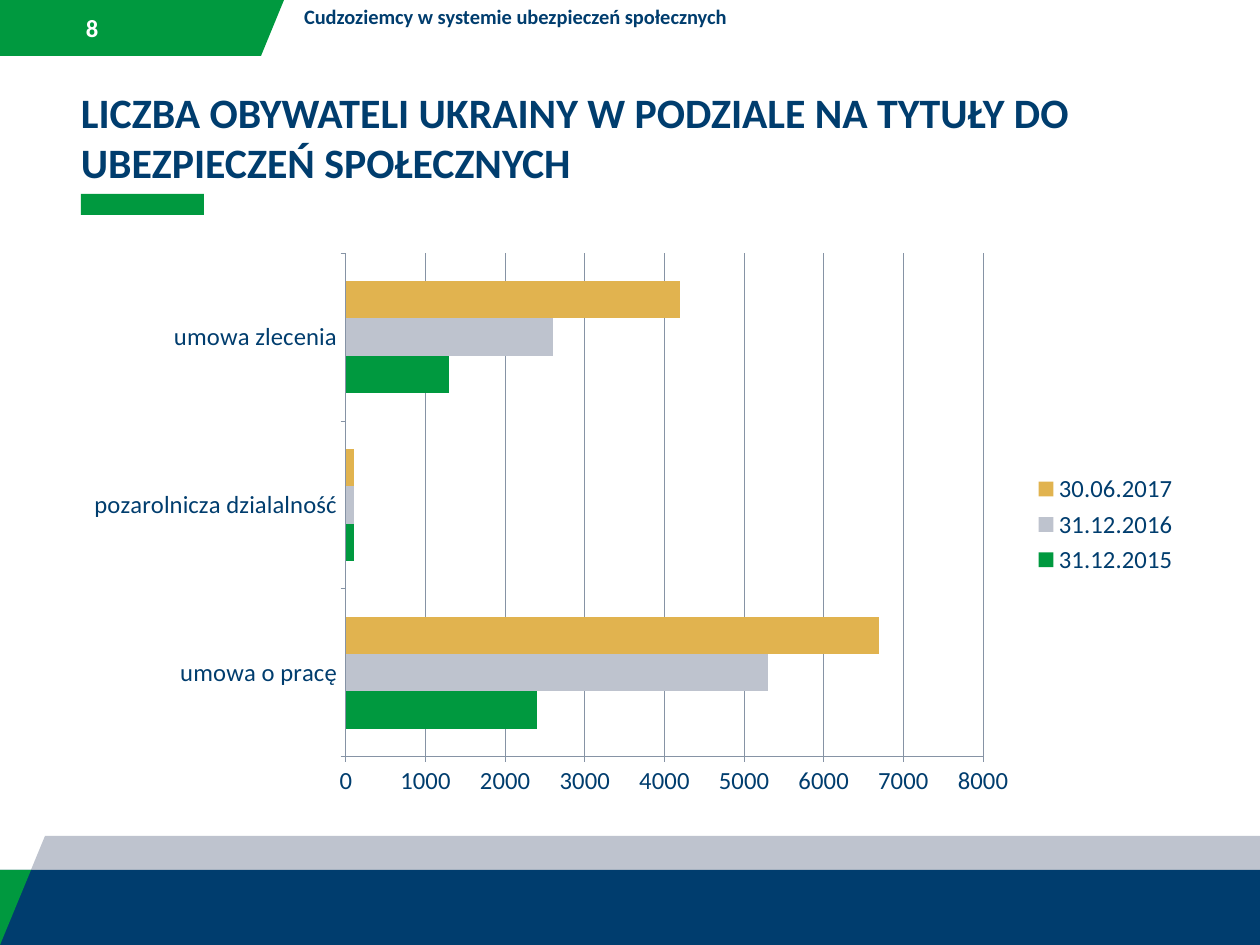
from lxml import etree
from pptx import Presentation
from pptx import util as u
from pptx.chart import data
from pptx.dml.color import RGBColor
from pptx.enum import chart as ch, shapes, text

PX = 10320
FONT = "Calibri"
COLORS = {"green": "00993F", "navy": "003D6E", "grey": "BEC3CE",
          "gold": "E1B34F", "white": "FFFFFF", "axis": "8693A5"}
CATEGORIES = ["umowa o pracę", "pozarolnicza dzialalność", "umowa zlecenia"]
SERIES = [("31.12.2015", "green", (2400, 100, 1300)),
          ("31.12.2016", "grey", (5300, 100, 2600)),
          ("30.06.2017", "gold", (6700, 100, 4200))]


def rgb(name):
    """Return a named colour."""
    return RGBColor.from_string(COLORS[name])


def emu(*lengths):
    """Turn px lengths into EMU."""
    return [u.Emu(n * PX) for n in lengths]


def paint(sp, color):
    """Give a shape a plain fill with no line or shadow."""
    sp.shadow.inherit = False
    sp.fill.solid()
    sp.fill.fore_color.rgb = rgb(color)
    sp.line.fill.background()


def add_rect(s, box, color):
    """Add a plain rectangle."""
    paint(s.shapes.add_shape(shapes.MSO_SHAPE.RECTANGLE, *emu(*box)), color)


def add_polygon(s, points, color):
    """Add a closed outline through the points."""
    builder = s.shapes.build_freeform(*points[0], scale=PX)
    builder.add_line_segments(points[1:], close=True)
    paint(builder.convert_to_shape(), color)


def set_font(font, size, color, bold=False):
    """Set the face, size, colour and weight of a font."""
    font.name, font.size, font.bold = FONT, u.Pt(size), bold
    font.color.rgb = rgb(color)


def add_text(s, box, words, size, color, inset=9, anchor=text.MSO_ANCHOR.TOP):
    """Add a bold wrapped text box."""
    tf = s.shapes.add_textbox(*emu(*box)).text_frame
    tf.word_wrap = True
    tf.vertical_anchor = anchor
    tf.margin_left, tf.margin_right = emu(inset, inset)
    r = tf.paragraphs[0].add_run()
    r.text = words
    set_font(r.font, size, color, bold=True)


def style_line(line):
    """Draw a thin axis or grid line."""
    line.color.rgb = rgb("axis")
    line.width = u.Pt(0.75)


def add_bar_chart(s, box):
    """Add the clustered bars of insured people by title and date."""
    chart_data = data.CategoryChartData()
    chart_data.categories = CATEGORIES
    for name, _, values in SERIES:
        chart_data.add_series(name, values)
    chart = s.shapes.add_chart(ch.XL_CHART_TYPE.BAR_CLUSTERED, *emu(*box), chart_data).chart
    chart.has_title = False
    set_font(chart.font, 20, "navy")
    chart.has_legend = True
    chart.legend.position = ch.XL_LEGEND_POSITION.RIGHT
    chart.legend.include_in_layout = False
    plot = chart.plots[0]
    plot.gap_width, plot.overlap, plot.vary_by_categories = 150, 0, False
    for series, (_, color, _) in zip(plot.series, SERIES):
        series.format.fill.solid()
        series.format.fill.fore_color.rgb = rgb(color)
        series.invert_if_negative = False
    for axis in (chart.category_axis, chart.value_axis):
        axis.major_tick_mark = ch.XL_TICK_MARK.OUTSIDE
        axis.minor_tick_mark = ch.XL_TICK_MARK.NONE
        style_line(axis.format.line)
    values = chart.value_axis
    values.minimum_scale, values.maximum_scale, values.major_unit = 0, 8000, 1000
    values.has_major_gridlines = True
    style_line(values.major_gridlines.format.line)


def main():
    """Build the slide and save it."""
    prs = Presentation()
    prs.slide_width, prs.slide_height = emu(1260, 945)
    s = prs.slides.add_slide(prs.slide_layouts[6])
    add_polygon(s, [(0, 0), (284, 0), (261, 56), (0, 56)], "green")
    add_polygon(s, [(0, 945), (45, 836), (1260, 836), (1260, 945)], "grey")
    add_rect(s, (0, 870, 1260, 75), "navy")
    add_polygon(s, [(0, 870), (31, 870), (0, 945)], "green")
    add_rect(s, (81, 194, 123, 21), "green")
    add_text(s, (81, 8, 75, 40), "8", 20, "white", 5, text.MSO_ANCHOR.MIDDLE)
    add_text(s, (295, 0, 893, 37), "Cudzoziemcy w systemie ubezpieczeń społecznych", 16.6, "navy")
    add_text(s, (72, 82, 1116, 105),
             "LICZBA OBYWATELI UKRAINY W PODZIALE NA TYTUŁY DO UBEZPIECZEŃ SPOŁECZNYCH",
             34, "navy")
    add_bar_chart(s, (72, 242, 1116, 565))
    prs.save("out.pptx")


if __name__ == "__main__":
    main()
